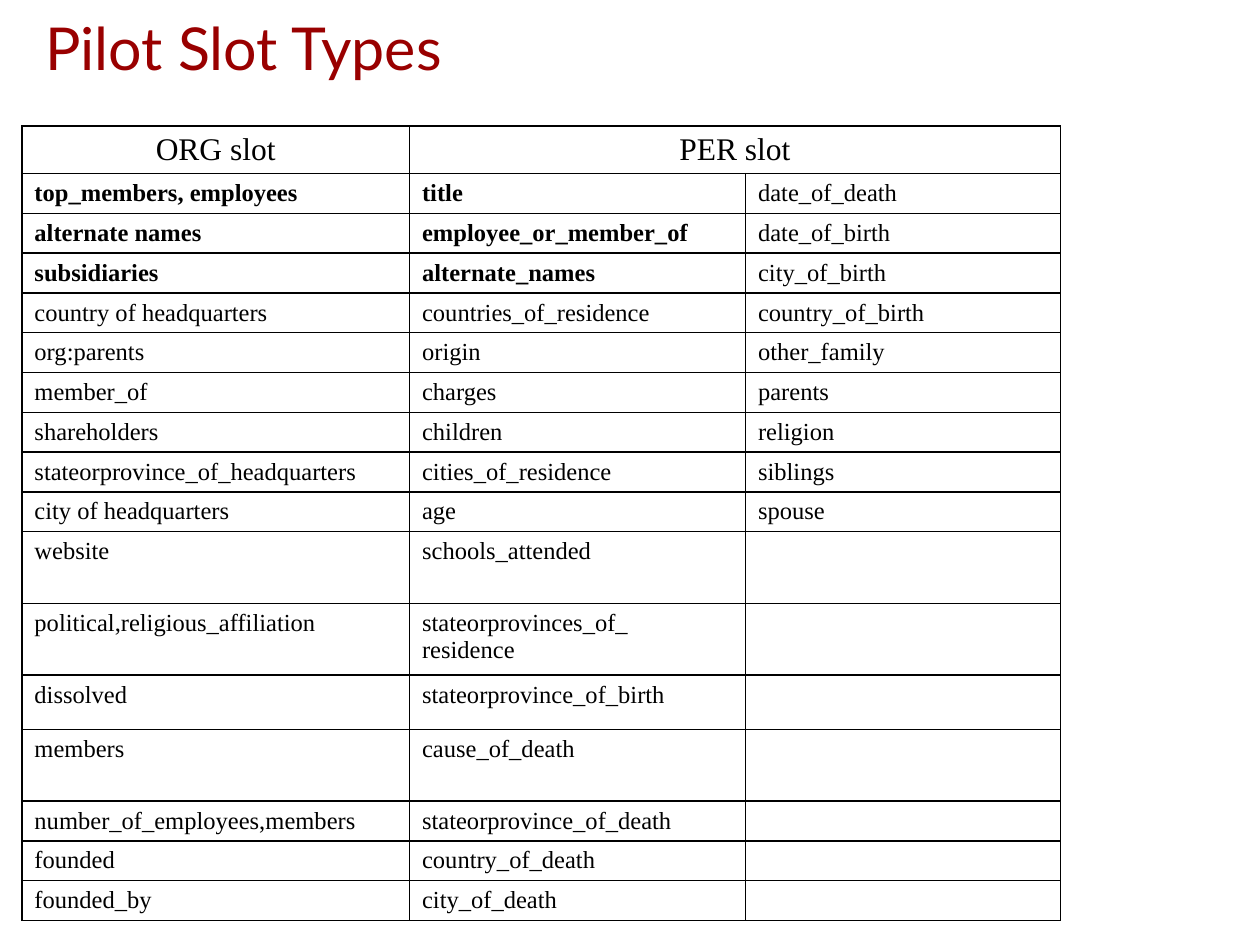
from typing import NamedTuple

from lxml import etree
from pptx import Presentation
from pptx import util as u
from pptx.dml.color import RGBColor
from pptx.enum import text
from pptx.oxml import ns

Pt = u.Pt
BLACK = RGBColor(0x00, 0x00, 0x00)
DARK_RED = RGBColor(0x99, 0x00, 0x00)
TITLE_FONT = "Lato"
TABLE_FONT = "Times New Roman"
COLUMN_WIDTHS = (221.5, 192, 180)
HEADER_HEIGHT = 27.2
ROW_HEIGHT = 22.75
CELL_BOTTOM_MARGIN = 1


class SlotRow(NamedTuple):
    org: str
    per: str
    per_more: str = ""
    bold: bool = False
    height: float = ROW_HEIGHT


ROWS = (
    SlotRow("top_members, employees", "title", "date_of_death", bold=True),
    SlotRow("alternate names", "employee_or_member_of", "date_of_birth", bold=True),
    SlotRow("subsidiaries", "alternate_names", "city_of_birth", bold=True),
    SlotRow("country of headquarters", "countries_of_residence", "country_of_birth"),
    SlotRow("org:parents", "origin", "other_family"),
    SlotRow("member_of", "charges", "parents"),
    SlotRow("shareholders", "children", "religion"),
    SlotRow("stateorprovince_of_headquarters", "cities_of_residence", "siblings"),
    SlotRow("city of headquarters", "age", "spouse"),
    SlotRow("website", "schools_attended", height=41),
    SlotRow("political,religious_affiliation", "stateorprovinces_of_\nresidence", height=41),
    SlotRow("dissolved", "stateorprovince_of_birth", height=31),
    SlotRow("members", "cause_of_death", height=41),
    SlotRow("number_of_employees,members", "stateorprovince_of_death"),
    SlotRow("founded", "country_of_death"),
    SlotRow("founded_by", "city_of_death"),
)


def style_font(font, name: str, size: float, color: RGBColor, bold: bool = False) -> None:
    font.name, font.size, font.bold = name, Pt(size), bold
    font.color.rgb = color


def add_borders(cell) -> None:
    """Put a 1 pt black line on all four sides, ahead of the cell's fill."""
    tc_pr = cell._tc.get_or_add_tcPr()
    for i, side in enumerate(("lnL", "lnR", "lnT", "lnB")):
        ln = etree.Element(ns.qn(f"a:{side}"), w=str(Pt(1)))
        fill = etree.SubElement(ln, ns.qn("a:solidFill"))
        etree.SubElement(fill, ns.qn("a:srgbClr"), val=str(BLACK))
        tc_pr.insert(i, ln)


def fill_cell(cell, content: str, size: float, bold: bool = False, align=text.PP_ALIGN.LEFT) -> None:
    cell.text = content
    for p in cell.text_frame.paragraphs:
        p.alignment = align
        style_font(p.font, TABLE_FONT, size, BLACK, bold)


def add_title(s, content: str) -> None:
    tf = s.shapes.add_textbox(Pt(18), Pt(-18), Pt(648), Pt(90)).text_frame
    tf.word_wrap = True
    tf.vertical_anchor = text.MSO_ANCHOR.MIDDLE
    tf.margin_left = Pt(8)
    p = tf.paragraphs[0]
    p.text = content
    style_font(p.font, TITLE_FONT, 33.8, DARK_RED)


def add_slot_table(s) -> None:
    heights = [HEADER_HEIGHT] + [row.height for row in ROWS]
    frame = s.shapes.add_table(len(heights), len(COLUMN_WIDTHS), Pt(12.5), Pt(72),
                               Pt(sum(COLUMN_WIDTHS)), Pt(sum(heights)))
    table = frame.table
    table.first_row = table.horz_banding = False
    for column, width in zip(table.columns, COLUMN_WIDTHS):
        column.width = Pt(width)
    for row, height in zip(table.rows, heights):
        row.height = Pt(height)
    for cell in table.iter_cells():
        cell.fill.background()
        cell.margin_bottom = Pt(CELL_BOTTOM_MARGIN)
        add_borders(cell)

    table.cell(0, 1).merge(table.cell(0, 2))
    for c, heading in enumerate(("ORG slot", "PER slot")):
        fill_cell(table.cell(0, c), heading, 18, align=text.PP_ALIGN.CENTER)
    for r, row in enumerate(ROWS, start=1):
        for c, content in enumerate((row.org, row.per, row.per_more)):
            fill_cell(table.cell(r, c), content, 14, bold=row.bold and c < 2)


def main() -> None:
    prs = Presentation()
    prs.slide_width, prs.slide_height = Pt(720), Pt(540)
    s = prs.slides.add_slide(prs.slide_layouts[6])
    add_title(s, "Pilot Slot Types")
    add_slot_table(s)
    prs.save("out.pptx")


if __name__ == "__main__":
    main()
